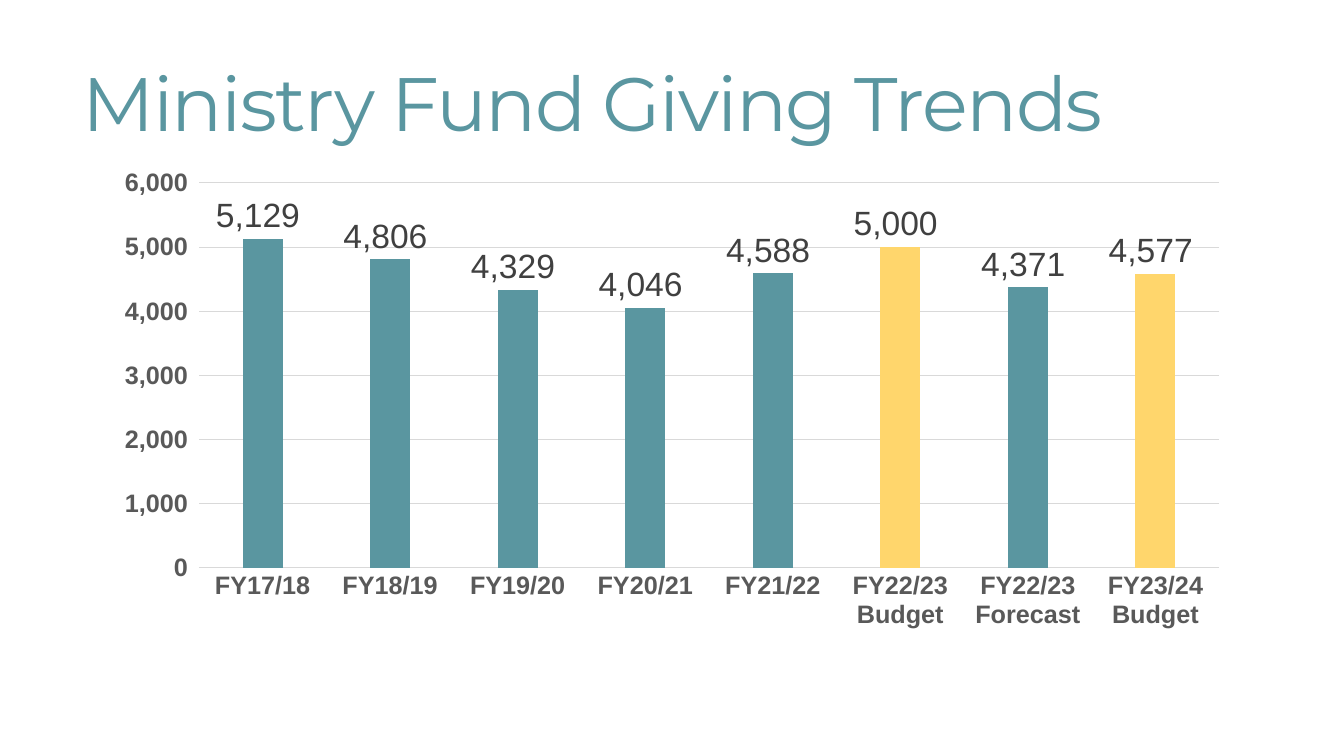
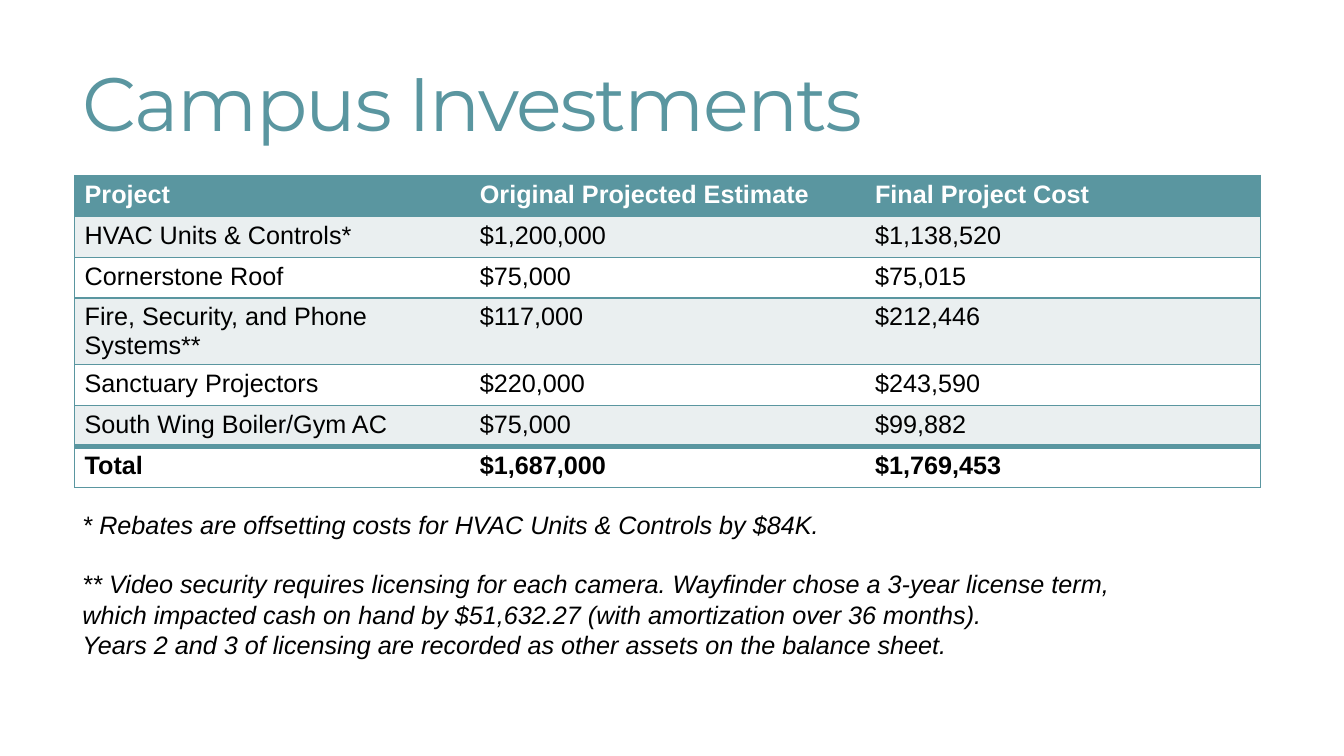
from lxml import etree
from pptx import Presentation
from pptx.chart.data import CategoryChartData
from pptx.dml.color import RGBColor
from pptx.enum.chart import XL_CHART_TYPE, XL_LABEL_POSITION, XL_TICK_MARK
from pptx.enum.text import MSO_ANCHOR, MSO_AUTO_SIZE, PP_ALIGN
from pptx.oxml.ns import qn
from pptx.util import Cm, Pt

TEAL = RGBColor(0x5A, 0x96, 0xA0)
YELLOW = RGBColor(0xFF, 0xD6, 0x6C)
PALE = RGBColor(0xEA, 0xEF, 0xF0)
WHITE = RGBColor(0xFF, 0xFF, 0xFF)
BLACK = RGBColor(0, 0, 0)
GRAY = RGBColor(0x59, 0x59, 0x59)
DARK = RGBColor(0x40, 0x40, 0x40)
GRID = RGBColor(0xD9, 0xD9, 0xD9)

COLUMN = XL_CHART_TYPE.COLUMN_CLUSTERED
OUTSIDE = XL_LABEL_POSITION.OUTSIDE_END
NO_TICK = XL_TICK_MARK.NONE
LEFT = PP_ALIGN.LEFT
MIDDLE, TOP = MSO_ANCHOR.MIDDLE, MSO_ANCHOR.TOP
NO_FIT = MSO_AUTO_SIZE.NONE

HEAD_FONT, BODY_FONT = "Montserrat", "Arial"
NUMBER = r"#,##0_);\(#,##0\)"
TITLE_ONLY = 5


class Deck:
    def __init__(self):
        self.prs = Presentation()
        self.prs.slide_width, self.prs.slide_height = Cm(33.87), Cm(19.05)
        self.s = None

    def style(self, font, size, color, bold=False, italic=False, name=BODY_FONT):
        font.name, font.size = name, Pt(size)
        font.bold, font.italic = bold, italic
        font.color.rgb = color

    def slide(self, title):
        self.s = self.prs.slides.add_slide(self.prs.slide_layouts[TITLE_ONLY])
        sp = self.s.shapes.title
        sp.left, sp.top, sp.width, sp.height = Cm(1.83), Cm(1.4), Cm(29.92), Cm(2.64)
        tf = sp.text_frame
        tf.text = title
        tf.auto_size, tf.vertical_anchor = NO_FIT, MIDDLE
        p = tf.paragraphs[0]
        p.alignment, p.line_spacing = LEFT, 0.85
        r = p.runs[0]
        self.style(r.font, 54, TEAL, name=HEAD_FONT)
        r.font._element.set("spc", "-120")

    def column_chart(self, x, y, w, h, values, highlights):
        data = CategoryChartData(number_format=NUMBER)
        data.categories = list(values)
        data.add_series("Series 1", list(values.values()))
        chart = self.s.shapes.add_chart(COLUMN, Cm(x), Cm(y), Cm(w), Cm(h), data).chart
        chart.has_legend = chart.has_title = False
        self.style(chart.font, 10, BLACK)
        for axis in (chart.category_axis, chart.value_axis):
            axis.major_tick_mark = axis.minor_tick_mark = NO_TICK
            self.style(axis.tick_labels.font, 18, GRAY, bold=True)
        line = chart.category_axis.format.line
        line.color.rgb, line.width = GRID, Pt(0.75)
        axis = chart.value_axis
        axis.minimum_scale, axis.maximum_scale, axis.major_unit = 0, 6000, 1000
        axis.tick_labels.number_format = NUMBER
        axis.tick_labels.number_format_is_linked = False
        axis.format.line.fill.background()
        line = axis.major_gridlines.format.line
        line.color.rgb, line.width = GRID, Pt(0.75)
        plot = chart.plots[0]
        plot.gap_width, plot.vary_by_categories = 219, False
        series = plot.series[0]
        series.format.fill.solid()
        series.format.fill.fore_color.rgb = TEAL
        for i in highlights:
            fill = series.points[i].format.fill
            fill.solid()
            fill.fore_color.rgb = YELLOW
        labels = series.data_labels
        labels.show_value, labels.position = True, OUTSIDE
        labels.number_format, labels.number_format_is_linked = NUMBER, False
        self.style(labels.font, 24, DARK)

    def borders(self, cell, left, right, top, bottom):
        tc_pr = cell._tc.get_or_add_tcPr()
        for side, width in zip("LRTB", (left, right, top, bottom)):
            ln = etree.SubElement(tc_pr, qn(f"a:ln{side}"), w=str(Pt(width)))
            if width:
                fill = etree.SubElement(ln, qn("a:solidFill"))
                etree.SubElement(fill, qn("a:srgbClr"), val=str(TEAL))
            else:
                etree.SubElement(ln, qn("a:noFill"))

    def table(self, x, y, col_width, heights, rows):
        n_rows, n_cols = len(rows), len(rows[0])
        table = self.s.shapes.add_table(n_rows, n_cols, Cm(x), Cm(y),
                                        Cm(col_width * n_cols), Cm(sum(heights))).table
        table.first_row = table.horz_banding = False
        for col in table.columns:
            col.width = Cm(col_width)
        last = n_rows - 1
        for i, row in enumerate(rows):
            table.rows[i].height = Cm(heights[i])
            background = TEAL if i == 0 else PALE if i % 2 else WHITE
            for j, text in enumerate(row):
                cell = table.cell(i, j)
                cell.text, cell.vertical_anchor = text, TOP
                self.style(cell.text_frame.paragraphs[0].runs[0].font, 18,
                           BLACK if i else WHITE, bold=i in (0, last))
                self.borders(cell, int(j == 0), int(j == n_cols - 1),
                             4 if i == last else 1, 4 if i == last - 1 else 1)
                cell.fill.solid()
                cell.fill.fore_color.rgb = background

    def notes(self, x, y, w, h, lines, gap_before):
        tf = self.s.shapes.add_textbox(Cm(x), Cm(y), Cm(w), Cm(h)).text_frame
        tf.word_wrap = True
        tf.text = "\n".join(lines)
        for p in tf.paragraphs:
            self.style(p.runs[0].font, 18, BLACK, italic=True)
        tf.paragraphs[gap_before].space_before = Pt(21)


def main():
    deck = Deck()

    deck.slide("Ministry Fund Giving Trends")
    giving = {
        "FY17/18": 5129,
        "FY18/19": 4806,
        "FY19/20": 4329,
        "FY20/21": 4046,
        "FY21/22": 4588,
        "FY22/23 Budget": 5000,
        "FY22/23 Forecast": 4371,
        "FY23/24 Budget": 4577,
    }
    budgets = [i for i, name in enumerate(giving) if name.endswith("Budget")]
    deck.column_chart(2.57, 4.01, 28.73, 12.07, giving, budgets)

    deck.slide("Campus Investments")
    projects = [
        ("Project", "Original Projected Estimate", "Final Project Cost"),
        ("HVAC Units & Controls*", "$1,200,000", "$1,138,520"),
        ("Cornerstone Roof", "$75,000", "$75,015"),
        ("Fire, Security, and Phone Systems**", "$117,000", "$212,446"),
        ("Sanctuary Projectors", "$220,000", "$243,590"),
        ("South Wing Boiler/Gym AC", "$75,000", "$99,882"),
        ("Total", "$1,687,000", "$1,769,453"),
    ]
    heights = [1.67 if "**" in row[0] else 1.03 for row in projects]
    deck.table(1.88, 4.42, 9.96, heights, projects)
    deck.notes(1.83, 12.7, 27.4, 4.88, [
        "* Rebates are offsetting costs for HVAC Units & Controls by $84K.",
        "** Video security requires licensing for each camera. Wayfinder chose a 3-year license term,",
        "which impacted cash on hand by $51,632.27 (with amortization over 36 months).",
        "Years 2 and 3 of licensing are recorded as other assets on the balance sheet.",
    ], gap_before=1)

    deck.prs.save("out.pptx")


if __name__ == "__main__":
    main()
